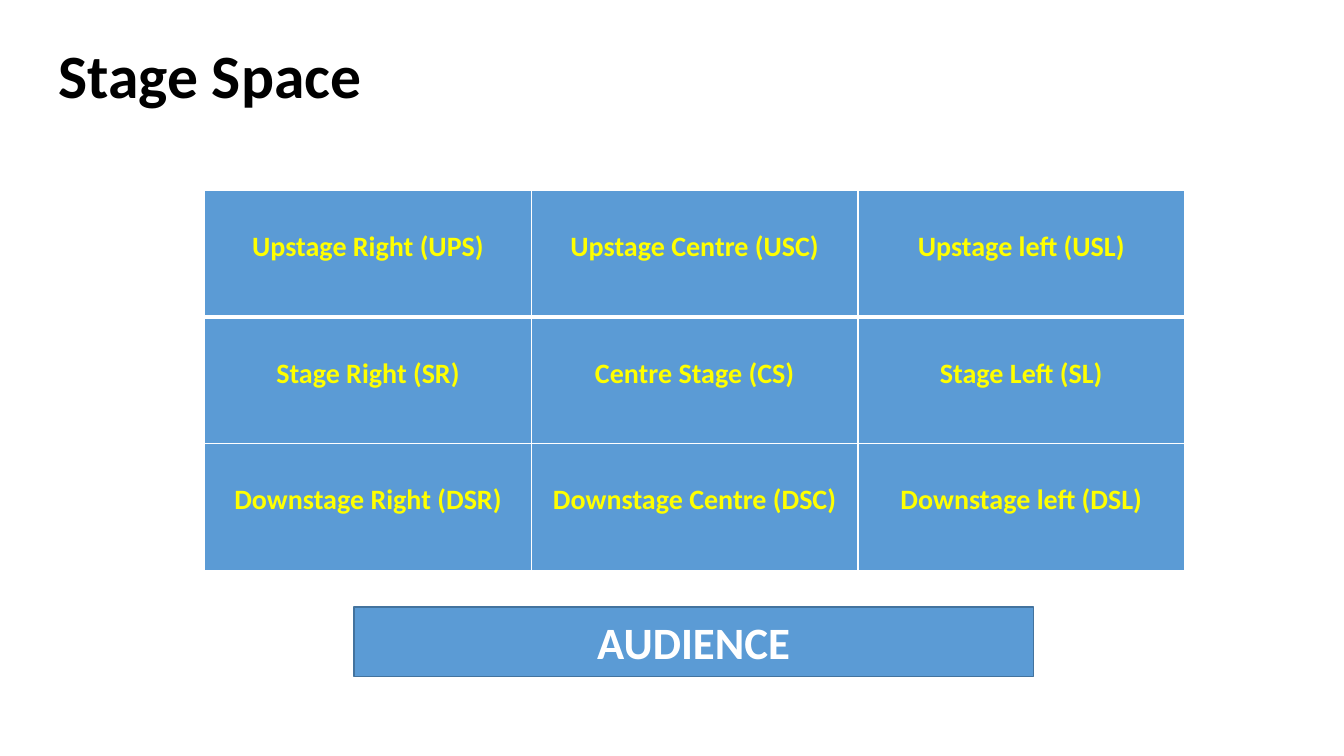
from lxml import etree
from pptx import Presentation
from pptx.dml.color import RGBColor
from pptx.enum.shapes import MSO_SHAPE
from pptx.enum.text import MSO_ANCHOR, PP_ALIGN
from pptx.oxml.ns import qn
from pptx.util import Inches, Pt

RECTANGLE = MSO_SHAPE.RECTANGLE
MIDDLE, TOP = MSO_ANCHOR.MIDDLE, MSO_ANCHOR.TOP
LEFT, CENTER = PP_ALIGN.LEFT, PP_ALIGN.CENTER

FONT = "Calibri"
COLORS = {
    "title": "000000",
    "stage": "5B9BD5",
    "area": "FFFF00",
    "grid": "FFFFFF",
    "audience": "FFFFFF",
    "outline": "43739E",
}
STAGE_AREAS = [
    ["Upstage Right (UPS)", "Upstage Centre (USC)", "Upstage left (USL)"],
    ["Stage Right (SR)", "Centre Stage (CS)", "Stage Left (SL)"],
    ["Downstage Right (DSR)", "Downstage Centre (DSC)", "Downstage left (DSL)"],
]


def rgb(name):
    return RGBColor.from_string(COLORS[name])


def fill_with(item, color):
    item.fill.solid()
    item.fill.fore_color.rgb = rgb(color)


def write(frame, text, size, color, align):
    """Put one bold line of text in a text frame."""
    frame.word_wrap = True
    frame.text = text
    paragraph = frame.paragraphs[0]
    paragraph.alignment = align
    font = paragraph.runs[0].font
    font.name, font.size, font.bold = FONT, Pt(size), True
    font.color.rgb = rgb(color)
    return paragraph


def set_borders(cell, widths):
    """Draw cell borders; widths maps each side (L, R, T, B) to points."""
    properties = cell._tc.get_or_add_tcPr()
    for index, (side, width) in enumerate(widths.items()):
        line = etree.Element(qn(f"a:ln{side}"), w=str(Pt(width)))
        fill = etree.SubElement(line, qn("a:solidFill"))
        etree.SubElement(fill, qn("a:srgbClr"), val=COLORS["grid"])
        properties.insert(index, line)


def add_title(slide, left, top, width, height):
    title = slide.shapes.add_textbox(
        Inches(left), Inches(top), Inches(width), Inches(height))
    title.text_frame.vertical_anchor = MIDDLE
    paragraph = write(title.text_frame, "Stage Space", 44, "title", LEFT)
    paragraph.line_spacing = 0.9


def add_stage(slide, left, top, width, height):
    rows, columns = len(STAGE_AREAS), len(STAGE_AREAS[0])
    stage = slide.shapes.add_table(
        rows, columns, Inches(left), Inches(top), Inches(width), Inches(height)).table
    for column in stage.columns:
        column.width = Inches(width / columns)
    for row_index, areas in enumerate(STAGE_AREAS):
        stage.rows[row_index].height = Inches(height / rows)
        above = 3 if row_index == 1 else 1
        below = 3 if row_index == 0 else 1
        for column_index, area in enumerate(areas):
            cell = stage.cell(row_index, column_index)
            fill_with(cell, "stage")
            cell.vertical_anchor = TOP
            cell.margin_top = Inches(0.39)
            write(cell.text_frame, area, 20, "area", CENTER)
            set_borders(cell, {"L": 1, "R": 1, "T": above, "B": below})


def add_audience(slide, left, top, width, height):
    audience = slide.shapes.add_shape(
        RECTANGLE, Inches(left), Inches(top), Inches(width), Inches(height))
    audience.shadow.inherit = False
    fill_with(audience, "stage")
    audience.line.color.rgb = rgb("outline")
    audience.line.width = Pt(1)
    audience.text_frame.vertical_anchor = MIDDLE
    write(audience.text_frame, "AUDIENCE", 32, "audience", CENTER)


def main():
    presentation = Presentation()
    presentation.slide_width = Inches(13.33)
    presentation.slide_height = Inches(7.5)
    slide = presentation.slides.add_slide(presentation.slide_layouts[6])
    add_title(slide, 0.48, 0.27, 3.34, 1.02)
    add_stage(slide, 2.03, 1.89, 9.72, 3.77)
    add_audience(slide, 3.51, 6.02, 6.74, 0.69)
    presentation.save("out.pptx")


if __name__ == "__main__":
    main()
